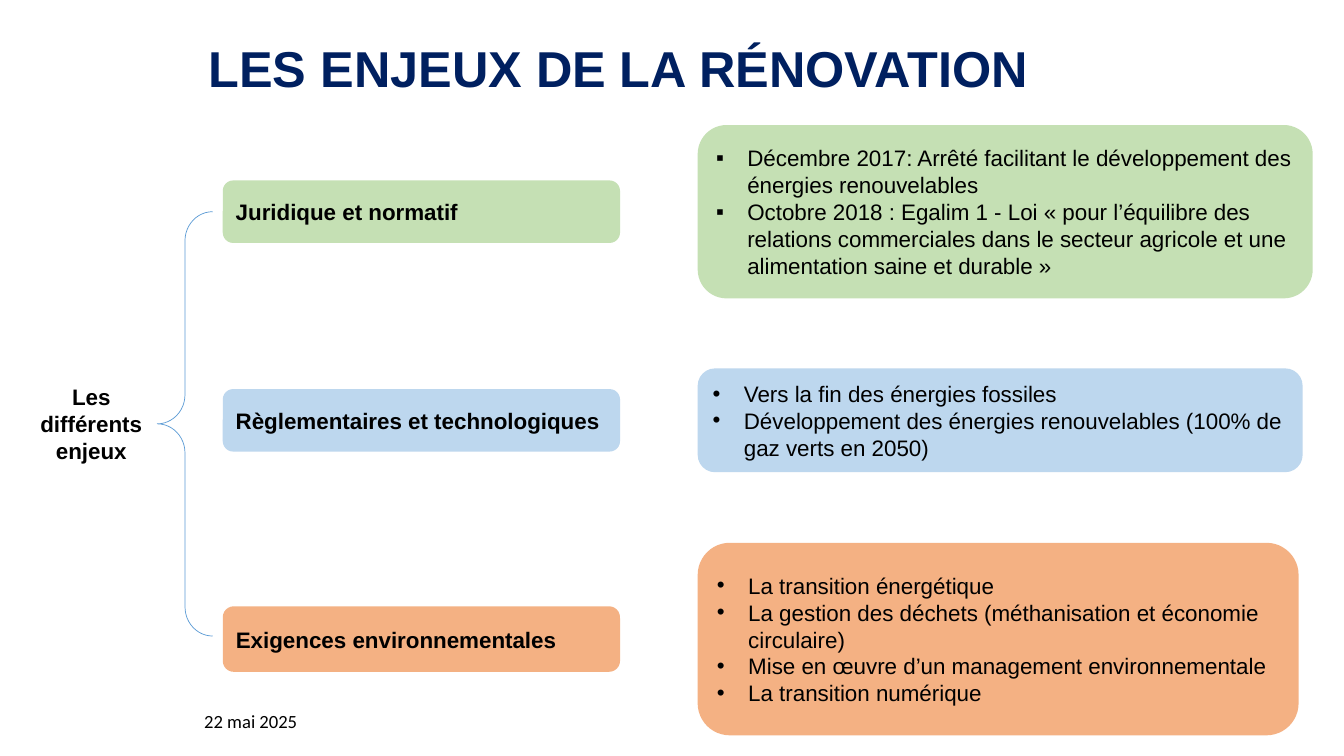
from dataclasses import dataclass

from lxml.etree import SubElement
from pptx import Presentation
from pptx.dml.color import RGBColor
from pptx.enum.shapes import MSO_SHAPE
from pptx.enum.text import MSO_ANCHOR, MSO_AUTO_SIZE, PP_ALIGN
from pptx.oxml.ns import qn
from pptx.util import Inches, Pt

TITLE = "LES ENJEUX DE LA RÉNOVATION"
ROOT = "Les différents enjeux"
DATE = "22 mai 2025"


@dataclass(frozen=True)
class Theme:
    title: str = "002060"
    text: str = "000000"
    brace: str = "5B9BD5"
    green: str = "C5E0B4"
    blue: str = "BDD7EE"
    orange: str = "F4B183"
    font: str = "Arial"
    date_font: str = "Calibri"
    title_size: float = 36
    body_size: float = 16
    date_size: float = 13.3
    brace_width: float = 0.5


THEME = Theme()

# Grid of 0.1 inch cells: widths in columns, heights and centres in rows
CELL = Inches(0.1)
COLUMNS, ROWS = 133.3, 75
HEADING_LEFT, HEADING_WIDTH = 22.1, 39.4
DETAIL_LEFT = 69.2

ISSUES = [
    {
        "heading": "Juridique et normatif",
        "color": THEME.green, "centre": 21, "heading_height": 6.2,
        "detail_size": (61, 17.2), "bullet": "▪",
        "details": [
            "Décembre 2017: Arrêté facilitant le développement des énergies renouvelables",
            "Octobre 2018 : Egalim 1 - Loi « pour l’équilibre des relations commerciales "
            "dans le secteur agricole et une alimentation saine et durable »",
        ],
    },
    {
        "heading": "Règlementaires et technologiques",
        "color": THEME.blue, "centre": 41.7, "heading_height": 6.2,
        "detail_size": (60, 10.3), "bullet": "•",
        "details": [
            "Vers la fin des énergies fossiles",
            "Développement des énergies renouvelables (100% de gaz verts en 2050)",
        ],
    },
    {
        "heading": "Exigences environnementales",
        "color": THEME.orange, "centre": 63.4, "heading_height": 6.5,
        "detail_size": (59.6, 19.1), "bullet": "•",
        "details": [
            "La transition énergétique",
            "La gestion des déchets (méthanisation et économie circulaire)",
            "Mise en œuvre d’un management environnementale",
            "La transition numérique",
        ],
    },
]


def cells(*counts):
    return [round(count * CELL) for count in counts]


def add_bullet(paragraph, character):
    properties = paragraph._p.get_or_add_pPr()
    properties.set("marL", str(Inches(0.31)))
    properties.set("indent", str(-Inches(0.31)))
    SubElement(properties, qn("a:buFont"), typeface=THEME.font)
    SubElement(properties, qn("a:buChar"), char=character)


def write(frame, lines, size=THEME.body_size, font=THEME.font, color=THEME.text,
          bold=False, align=PP_ALIGN.LEFT, anchor=MSO_ANCHOR.MIDDLE, bullet=None):
    frame.word_wrap = True
    frame.vertical_anchor = anchor
    for index, line in enumerate(lines):
        paragraph = frame.add_paragraph() if index else frame.paragraphs[0]
        paragraph.text = line
        paragraph.alignment = align
        if bullet:
            add_bullet(paragraph, bullet)
        paragraph.font.name = font
        paragraph.font.size = Pt(size)
        paragraph.font.bold = bold
        paragraph.font.color.rgb = RGBColor.from_string(color)


def add_plain_shape(slide, kind, left, top, width, height, fill=None):
    """Add a shape without shadow or outline, filled only when a colour is given."""
    shape = slide.shapes.add_shape(kind, *cells(left, top, width, height))
    shape.shadow.inherit = False
    shape.line.fill.background()
    if fill:
        shape.fill.solid()
        shape.fill.fore_color.rgb = RGBColor.from_string(fill)
    else:
        shape.fill.background()
    return shape


def add_title(slide):
    title = slide.shapes.title
    title.left, title.top, title.width, title.height = cells(16.1, 2.3, 90.5, 8)
    write(title.text_frame, [TITLE], THEME.title_size, color=THEME.title, bold=True,
          align=PP_ALIGN.CENTER, anchor=MSO_ANCHOR.TOP)
    title.text_frame.auto_size = MSO_AUTO_SIZE.SHAPE_TO_FIT_TEXT
    title.text_frame.paragraphs[0].line_spacing = 1.15


def add_root(slide):
    label = add_plain_shape(slide, MSO_SHAPE.RECTANGLE, 2, 27.7, 14.1, 28.6)
    write(label.text_frame, [ROOT], bold=True, align=PP_ALIGN.CENTER)
    first, last = ISSUES[0]["centre"], ISSUES[-1]["centre"]
    brace = add_plain_shape(slide, MSO_SHAPE.LEFT_BRACE, 15.6, first, 5.5, last - first - 0.3)
    brace.adjustments[0] = 0.525
    brace.adjustments[1] = 0.5
    brace.line.color.rgb = RGBColor.from_string(THEME.brace)
    brace.line.width = Pt(THEME.brace_width)


def add_issue(slide, issue):
    width, height = issue["detail_size"]
    boxes = [
        (HEADING_LEFT, HEADING_WIDTH, issue["heading_height"], [issue["heading"]], True, None),
        (DETAIL_LEFT, width, height, issue["details"], False, issue["bullet"]),
    ]
    for left, width, height, lines, bold, bullet in boxes:
        box = add_plain_shape(slide, MSO_SHAPE.ROUNDED_RECTANGLE, left,
                              issue["centre"] - height / 2, width, height, issue["color"])
        write(box.text_frame, lines, bold=bold, bullet=bullet)


def add_date(slide):
    frame = slide.shapes.add_textbox(*cells(0, 70.8, 29.7, 3.5)).text_frame
    frame.margin_left = frame.margin_right = Inches(0.02)
    frame.margin_top = frame.margin_bottom = Inches(0.02)
    write(frame, [DATE], THEME.date_size, THEME.date_font,
          align=PP_ALIGN.RIGHT, anchor=MSO_ANCHOR.TOP)
    frame.paragraphs[0].line_spacing = 0.7


def main():
    presentation = Presentation()
    presentation.slide_width, presentation.slide_height = cells(COLUMNS, ROWS)
    slide = presentation.slides.add_slide(presentation.slide_layouts[5])
    add_title(slide)
    add_root(slide)
    for issue in ISSUES:
        add_issue(slide, issue)
    add_date(slide)
    presentation.save("out.pptx")


if __name__ == "__main__":
    main()
